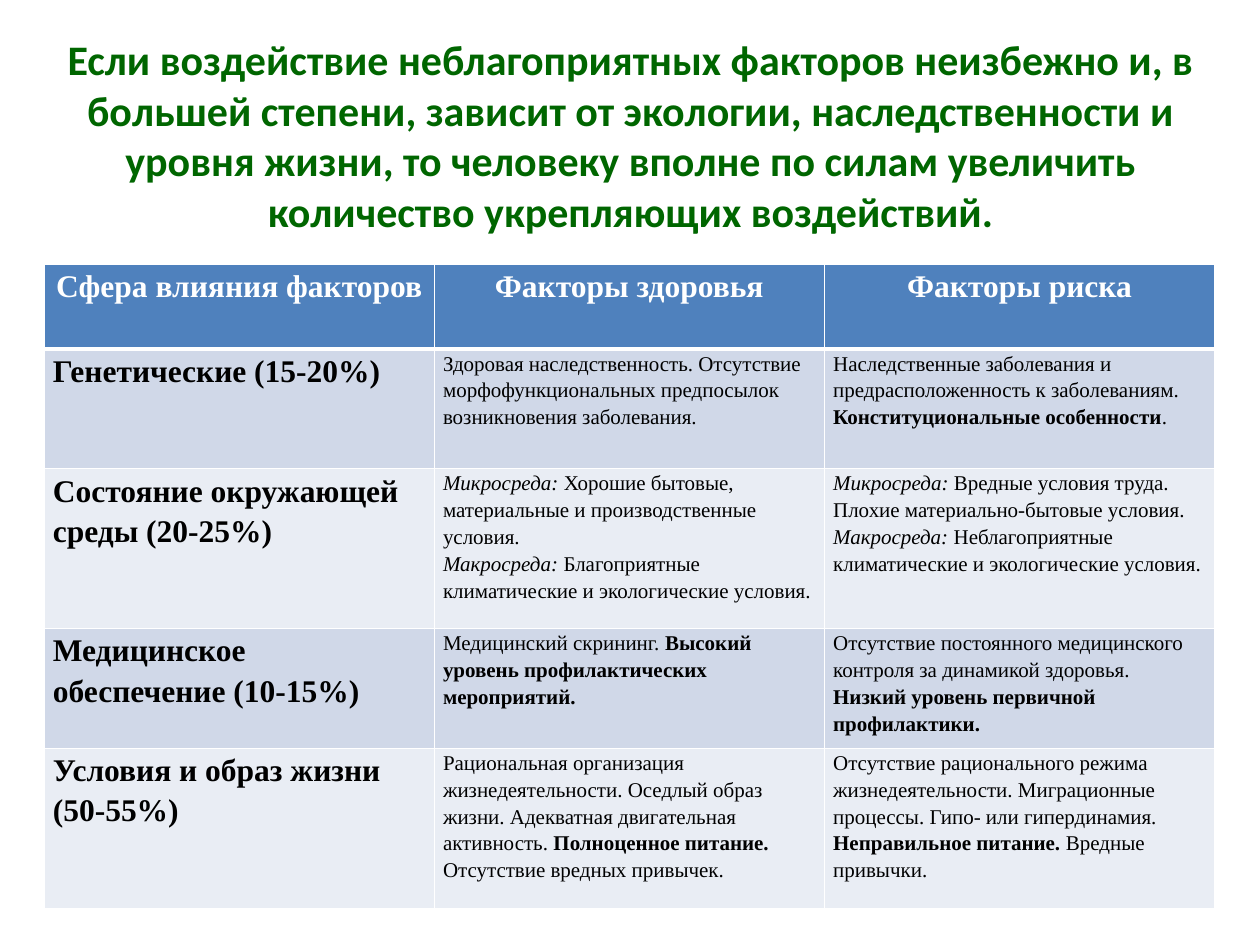
from lxml import etree
from pptx import Presentation
from pptx.dml.color import RGBColor
from pptx.enum import text
from pptx.oxml import ns
from pptx.util import Inches, Pt

GREEN = RGBColor(0x00, 0x66, 0x00)
WHITE = RGBColor(0xFF, 0xFF, 0xFF)
BLACK = RGBColor(0x00, 0x00, 0x00)
HEADER_BLUE = RGBColor(0x4F, 0x81, 0xBD)
BANDS = (RGBColor(0xD0, 0xD8, 0xE8), RGBColor(0xE9, 0xED, 0xF4))

PLAIN, BOLD, ITALIC = "plain", "bold", "italic"
MICRO = ("Микросреда: ", ITALIC)
MACRO = ("Макросреда: ", ITALIC)

TITLE = (
    "Если воздействие неблагоприятных факторов неизбежно и, в большей степени, "
    "зависит от экологии, наследственности и уровня жизни, то человеку вполне "
    "по силам увеличить количество укрепляющих воздействий."
)
HEADERS = ("Сфера влияния факторов", "Факторы здоровья", "Факторы риска")

# Each row: sphere, health factors, risk factors; factors are paragraphs of runs.
FACTORS = [
    (
        "Генетические (15-20%)",
        [[("Здоровая наследственность. Отсутствие морфофункциональных "
           "предпосылок возникновения заболевания.", PLAIN)]],
        [[("Наследственные заболевания и предрасположенность к заболеваниям. ", PLAIN),
          ("Конституциональные особенности", BOLD), (".", PLAIN)]],
    ),
    (
        "Состояние окружающей среды (20-25%)",
        [[MICRO, ("Хорошие бытовые, материальные и производственные условия.", PLAIN)],
         [MACRO, ("Благоприятные климатические и экологические условия.", PLAIN)]],
        [[MICRO, ("Вредные условия труда. Плохие материально-бытовые условия.", PLAIN)],
         [MACRO, ("Неблагоприятные климатические и экологические условия.", PLAIN)]],
    ),
    (
        "Медицинское обеспечение (10-15%)",
        [[("Медицинский скрининг. ", PLAIN),
          ("Высокий уровень профилактических мероприятий.", BOLD)]],
        [[("Отсутствие постоянного медицинского контроля за динамикой здоровья. ", PLAIN),
          ("Низкий уровень первичной профилактики.", BOLD)]],
    ),
    (
        "Условия и образ жизни (50-55%)",
        [[("Рациональная организация жизнедеятельности. Оседлый образ жизни. "
           "Адекватная двигательная активность. ", PLAIN),
          ("Полноценное питание. ", BOLD), ("Отсутствие вредных привычек.", PLAIN)]],
        [[("Отсутствие рационального режима жизнедеятельности. Миграционные "
           "процессы. Гипо- или гипердинамия. ", PLAIN),
          ("Неправильное питание.", BOLD), (" Вредные привычки.", PLAIN)]],
    ),
]
ROW_HEIGHTS = (0.67, 0.95, 1.27, 0.95, 1.27)


def place_title(slide, left, top, width, height):
    title = slide.shapes.title
    title.left, title.top, title.width, title.height = left, top, width, height
    frame = title.text_frame
    frame.text = TITLE
    frame.word_wrap = True
    frame.auto_size = text.MSO_AUTO_SIZE.NONE
    frame.vertical_anchor = text.MSO_ANCHOR.MIDDLE
    paragraph = frame.paragraphs[0]
    paragraph.alignment = text.PP_ALIGN.CENTER
    font = paragraph.font
    font.name, font.size, font.bold = "Calibri", Pt(24), True
    font.color.rgb = GREEN


def set_borders(cell, top_width, bottom_width):
    properties = cell._tc.get_or_add_tcPr()
    widths = {"lnL": 1, "lnR": 1, "lnT": top_width, "lnB": bottom_width}
    for tag, width in widths.items():
        line = etree.SubElement(properties, ns.qn(f"a:{tag}"), w=str(Pt(width)))
        fill = etree.SubElement(line, ns.qn("a:solidFill"))
        etree.SubElement(fill, ns.qn("a:srgbClr"), val=str(WHITE))


def fill_cell(cell, paragraphs, size, color, alignment):
    cell.margin_left = cell.margin_right = Inches(0.07)
    cell.margin_top = cell.margin_bottom = 0
    frame = cell.text_frame
    for index, runs in enumerate(paragraphs):
        paragraph = frame.add_paragraph() if index else frame.paragraphs[0]
        paragraph.alignment = alignment
        paragraph.line_spacing = 1.15
        font = paragraph.font
        font.name, font.size = "Times New Roman", Pt(size)
        font.color.rgb = color
        for wording, style in runs:
            run = paragraph.add_run()
            run.text = wording
            run.font.bold = style == BOLD
            run.font.italic = style == ITALIC


def place_factor_table(slide, left, top, width, height):
    rows = [[[[(header, BOLD)]] for header in HEADERS]]
    rows += [[[[(sphere, BOLD)]], health, risk] for sphere, health, risk in FACTORS]
    table = slide.shapes.add_table(
        len(rows), len(HEADERS), left, top, width, height).table
    for column in table.columns:
        column.width = width // len(HEADERS)
    for row, row_height in zip(table.rows, ROW_HEIGHTS):
        row.height = Inches(row_height)

    for row_index, row in enumerate(rows):
        is_header = row_index == 0
        for column_index, paragraphs in enumerate(row):
            cell = table.cell(row_index, column_index)
            set_borders(cell, 3 if row_index == 1 else 1, 3 if is_header else 1)
            cell.fill.solid()
            cell.fill.fore_color.rgb = (
                HEADER_BLUE if is_header else BANDS[(row_index - 1) % 2])
            fill_cell(
                cell, paragraphs,
                size=18 if is_header or column_index == 0 else 12,
                color=WHITE if is_header else BLACK,
                alignment=text.PP_ALIGN.CENTER if is_header else text.PP_ALIGN.LEFT)


def main():
    presentation = Presentation()
    presentation.slide_width, presentation.slide_height = Inches(10), Inches(7.5)
    slide = presentation.slides.add_slide(
        presentation.slide_layouts.get_by_name("Title Only"))
    place_title(slide, Inches(0.2), Inches(0.21), Inches(9.61), Inches(1.72))
    place_factor_table(slide, Inches(0.35), Inches(2.1), Inches(9.29), Inches(5.11))
    presentation.save("out.pptx")


if __name__ == "__main__":
    main()
